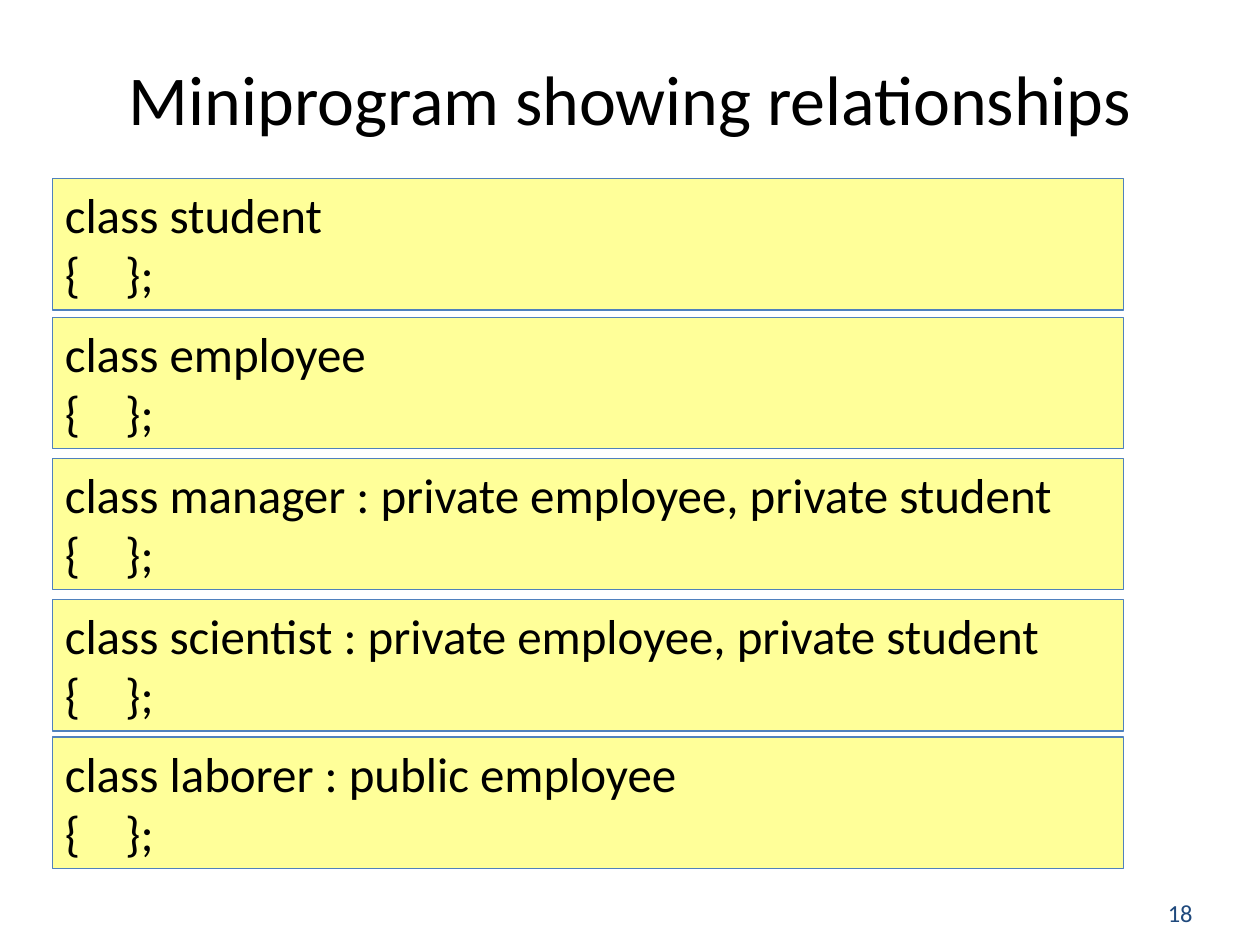
"""Build a slide of five class declarations that show inheritance relationships."""
import pptx
import pptx.dml.color
import pptx.enum.shapes
import pptx.enum.text
import pptx.oxml
import pptx.oxml.ns
import pptx.util

Pt = pptx.util.Pt
ALIGN = pptx.enum.text.PP_ALIGN
ANCHOR = pptx.enum.text.MSO_ANCHOR
NAMESPACE = pptx.oxml.ns.nsdecls("a")


def color(value):
    return pptx.dml.color.RGBColor.from_string(value)


def write(shape, lines, size, ink, alignment, anchor):
    frame = shape.text_frame
    frame.text = "\n".join(lines)
    frame.word_wrap = True
    frame.vertical_anchor = anchor
    for paragraph in frame.paragraphs:
        paragraph.alignment = alignment
        paragraph.font.color.rgb = color(ink)
        for name, value in {"size": Pt(size), "name": "Calibri"}.items():
            setattr(paragraph.font, name, value)


presentation = pptx.Presentation()
page = {"slide_width": Pt(720), "slide_height": Pt(540)}
for name, value in page.items():
    setattr(presentation, name, value)
slide = presentation.slides.add_slide(presentation.slide_layouts[6])

number = slide.shapes.add_textbox(Pt(660.24), Pt(509.76), Pt(48.24), Pt(23.76))
write(number, ["18"], 14, "1F497D", ALIGN.LEFT, ANCHOR.MIDDLE)

title = slide.shapes.add_textbox(Pt(36), Pt(27.36), Pt(648), Pt(56.16))
write(title, ["Miniprogram showing relationships"], 40, "000000", ALIGN.CENTER, ANCHOR.MIDDLE)

declarations = {
    "class student": 102.2,
    "class employee": 181.5,
    "class manager : private employee, private student": 262.1,
    "class scientist : private employee, private student": 342.7,
    "class laborer : public employee": 421.2,
}
for declaration, top in declarations.items():
    box = slide.shapes.add_shape(
        pptx.enum.shapes.MSO_SHAPE.RECTANGLE, Pt(30), Pt(top), Pt(612), Pt(75)
    )
    box.shadow.inherit = False
    box.fill.solid()
    box.fill.fore_color.rgb = color("FFFF00")
    fill = box.fill._xPr.find(".//" + pptx.oxml.ns.qn("a:srgbClr"))
    fill.append(pptx.oxml.parse_xml(f'<a:alpha {NAMESPACE} val="40000"/>'))
    box.line.color.rgb = color("4F81BD")
    box.line.width = Pt(0.75)
    write(box, [declaration, "{\t};"], 28, "000000", ALIGN.LEFT, ANCHOR.TOP)
    properties = box.text_frame.paragraphs[1]._p.get_or_add_pPr()
    tabs = f'<a:tabLst {NAMESPACE}><a:tab pos="{Pt(34.5)}" algn="l"/></a:tabLst>'
    properties.insert(0, pptx.oxml.parse_xml(tabs))

presentation.save("out.pptx")
